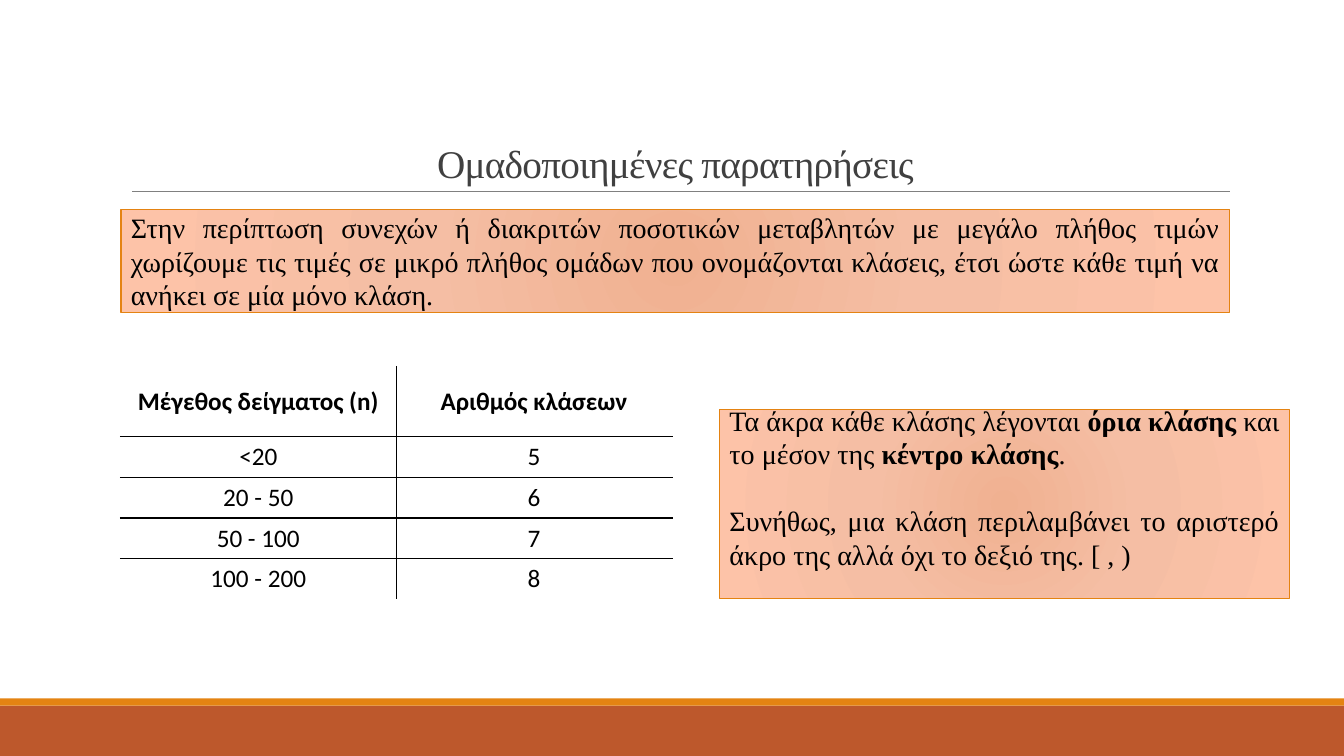
from dataclasses import dataclass
from typing import NamedTuple

from lxml.etree import SubElement
from pptx import Presentation
from pptx.dml.color import RGBColor
from pptx.enum.shapes import MSO_CONNECTOR, MSO_SHAPE
from pptx.enum.text import MSO_ANCHOR, PP_ALIGN
from pptx.oxml import parse_xml
from pptx.oxml.ns import nsdecls, qn
from pptx.util import Pt


@dataclass(frozen=True)
class Theme:
    """Colours, fonts and sizes of the slide."""
    ink: str = "000000"
    paper: str = "FFFFFF"
    heading: str = "404040"
    rule: str = "808080"
    accent: str = "E48312"
    footer: str = "BD582C"
    glow: tuple = ((0, "F0B191"), (45, "F5BEA4"), (100, "FDC3A8"))
    serif: str = "Times New Roman"
    sans: str = "Calibri"
    title_size: int = 28
    body_size: int = 20
    table_size: int = 18


class Box(NamedTuple):
    """A rectangle in points."""
    left: float
    top: float
    width: float
    height: float

    def emu(self):
        """Return the four lengths for python-pptx."""
        return [Pt(length) for length in self]


THEME = Theme()
DEFINITION = [[("Στην περίπτωση συνεχών ή διακριτών ποσοτικών μεταβλητών με μεγάλο πλήθος "
                "τιμών χωρίζουμε τις τιμές σε μικρό πλήθος ομάδων που ονομάζονται κλάσεις, "
                "έτσι ώστε κάθε τιμή να ανήκει σε μία μόνο κλάση.", False)]]
CLASS_LIMITS = [
    [("Τα άκρα κάθε κλάσης λέγονται ", False), ("όρια κλάσης", True),
     (" και το μέσον της ", False), ("κέντρο κλάσης", True), (".", False)],
    [("Συνήθως, μια κλάση περιλαμβάνει το αριστερό άκρο της αλλά όχι το δεξιό της. [ , )",
      False)],
]
CLASS_COUNTS = [("Μέγεθος δείγματος (n)", "Αριθμός κλάσεων"), ("<20", "5"),
                ("20 - 50", "6"), ("50 - 100", "7"), ("100 - 200", "8")]


def apply(target, **values):
    """Set every given format value on the target."""
    for name, value in values.items():
        setattr(target, name, value)


def write(paragraph, text, font, size, colour, bold=False):
    """Add one formatted run to a paragraph and return it."""
    run = paragraph.add_run()
    run.text = text
    apply(run.font, name=font, size=Pt(size), bold=bold)
    run.font.color.rgb = RGBColor.from_string(colour)
    return run


def draw_band(slide, box, colour):
    """Draw one plain footer band."""
    band = slide.shapes.add_shape(MSO_SHAPE.RECTANGLE, *box.emu())
    band.shadow.inherit = False
    band.fill.solid()
    band.fill.fore_color.rgb = RGBColor.from_string(colour)
    band.line.fill.background()


def draw_title(slide, box, text):
    """Draw the heading and the rule at the foot of its box."""
    rule_left, rule_right = box.left + 8, box.left + box.width
    foot = box.top + box.height
    rule = slide.shapes.add_connector(
        MSO_CONNECTOR.STRAIGHT, Pt(rule_left), Pt(foot), Pt(rule_right), Pt(foot))
    rule.line.width = Pt(0.5)
    rule.line.color.rgb = RGBColor.from_string(THEME.rule)
    SubElement(rule._element.spPr, qn("a:effectLst"))

    frame = slide.shapes.add_textbox(*box.emu()).text_frame
    apply(frame, word_wrap=True, vertical_anchor=MSO_ANCHOR.BOTTOM)
    heading = frame.paragraphs[0]
    apply(heading, alignment=PP_ALIGN.CENTER, line_spacing=0.85)
    run = write(heading, text, THEME.serif, THEME.title_size, THEME.heading)
    run.font._element.set("spc", "-50")


def fill_glow(shape):
    """Fill a shape with the circular gradient of the theme."""
    stops = "".join(f'<a:gs pos="{place * 1000}"><a:srgbClr val="{colour}"/></a:gs>'
                    for place, colour in THEME.glow)
    glow = parse_xml(
        f'<a:gradFill {nsdecls("a")} rotWithShape="1"><a:gsLst>{stops}</a:gsLst>'
        '<a:path path="circle"><a:fillToRect l="100000" t="100000" r="100000" b="100000"/>'
        '</a:path></a:gradFill>')
    shape.fill.background()
    properties = shape._element.spPr
    properties.replace(properties.find(qn("a:noFill")), glow)


def draw_note(slide, box, paragraphs, gap=0):
    """Draw a glowing note, with the gap below each of its paragraphs."""
    note = slide.shapes.add_shape(MSO_SHAPE.RECTANGLE, *box.emu())
    note.shadow.inherit = False
    fill_glow(note)
    note.line.width = Pt(1)
    note.line.color.rgb = RGBColor.from_string(THEME.accent)
    frame = note.text_frame
    apply(frame, word_wrap=True, vertical_anchor=MSO_ANCHOR.MIDDLE,
          margin_bottom=Pt(3.6 + gap))
    for index, runs in enumerate(paragraphs):
        paragraph = frame.add_paragraph() if index else frame.paragraphs[0]
        apply(paragraph, alignment=PP_ALIGN.JUSTIFY, space_before=Pt(gap if index else 0))
        for text, bold in runs:
            write(paragraph, text, THEME.serif, THEME.body_size, THEME.ink, bold)


def draw_borders(cell, outer_sides):
    """Draw inner borders in ink and outer ones in paper colour."""
    for side in "LRTB":
        colour = THEME.paper if side in outer_sides else THEME.ink
        cell._tc.get_or_add_tcPr().append(parse_xml(
            f'<a:ln{side} {nsdecls("a")} w="12700"><a:solidFill>'
            f'<a:srgbClr val="{colour}"/></a:solidFill></a:ln{side}>'))


def draw_class_table(slide, box, rows, header_height):
    """Draw the table of class counts by sample size."""
    row_count, column_count = len(rows), len(rows[0])
    table = slide.shapes.add_table(row_count, column_count, *box.emu()).table
    apply(table, first_row=False, horz_banding=False)
    row_height = (box.height - header_height) / (row_count - 1)
    for column in table.columns:
        column.width = Pt(box.width / column_count)
    for r, texts in enumerate(rows):
        table.rows[r].height = Pt(row_height if r else header_height)
        for c, text in enumerate(texts):
            cell = table.cell(r, c)
            edges = {"L": c == 0, "R": c == column_count - 1,
                     "T": r == 0, "B": r == row_count - 1}
            draw_borders(cell, [side for side, outer in edges.items() if outer])
            cell.fill.background()
            cell.vertical_anchor = MSO_ANCHOR.MIDDLE
            paragraph = cell.text_frame.paragraphs[0]
            paragraph.alignment = PP_ALIGN.CENTER
            write(paragraph, text, THEME.sans, THEME.table_size, THEME.ink, r == 0)


def main():
    """Build the slide and save it."""
    deck = Presentation()
    apply(deck, slide_width=Pt(960), slide_height=Pt(540))
    slide = deck.slides.add_slide(deck.slide_layouts[6])
    draw_band(slide, Box(0, 504, 960, 36), THEME.footer)
    draw_band(slide, Box(0, 498.8, 960, 5.2), THEME.accent)
    draw_title(slide, Box(86.4, 22.4, 792, 114.4), "Ομαδοποιημένες παρατηρήσεις")
    draw_note(slide, Box(86.4, 149.6, 792, 73.6), DEFINITION)
    draw_class_table(slide, Box(86, 261.8, 394, 166.6), CLASS_COUNTS, 50)
    draw_note(slide, Box(514, 292.4, 407, 135), CLASS_LIMITS, gap=24)
    deck.save("out.pptx")


if __name__ == "__main__":
    main()
